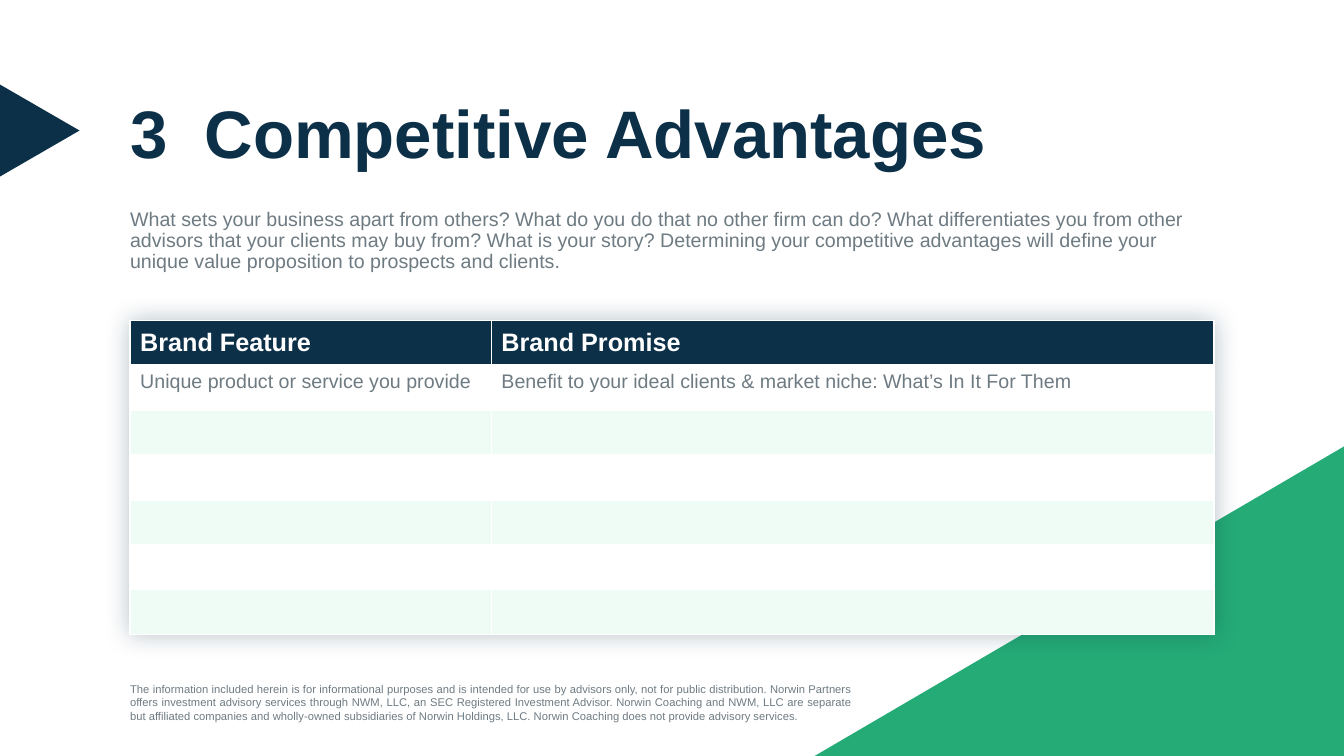
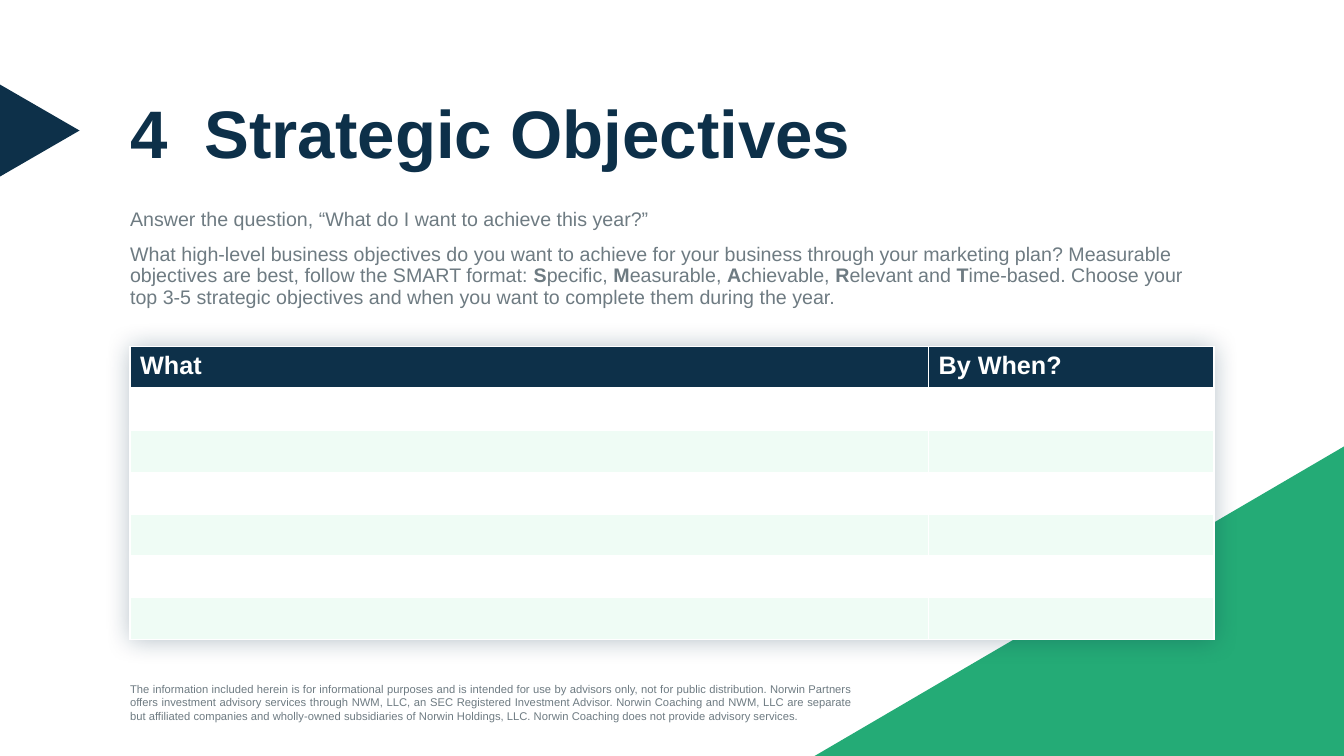
import pptx
import pptx.dml.color
import pptx.enum.shapes
import pptx.enum.text
import pptx.oxml
import pptx.oxml.ns
import pptx.util

SHAPE = pptx.enum.shapes.MSO_SHAPE
ANCHOR = pptx.enum.text.MSO_ANCHOR
ALIGN = pptx.enum.text.PP_ALIGN

DISCLAIMER = (
    "The information included herein is for informational purposes and is intended for use by "
    "advisors only, not for public distribution. Norwin Partners offers investment advisory "
    "services through NWM, LLC, an SEC Registered Investment Advisor. Norwin Coaching and NWM, "
    "LLC are separate but affiliated companies and wholly-owned subsidiaries of Norwin Holdings, "
    "LLC. Norwin Coaching does not provide advisory services."
)


def rgb(value):
    return pptx.dml.color.RGBColor.from_string(value)


def element(tag, content="", **attributes):
    """Build one element of the drawing namespace."""
    pairs = "".join(f' {name}="{value}"' for name, value in attributes.items())
    return pptx.oxml.parse_xml(
        f"<a:{tag} {pptx.oxml.ns.nsdecls('a')}{pairs}>{content}</a:{tag}>")


class Deck:
    FONT = "Arial"
    NAVY, GREEN, GREY = "0D3049", "24AB76", "6E7B82"
    WHITE, MINT = "FFFFFF", "EFFCF5"
    COLUMNS = 12
    MARGIN, COLUMN, ROW = 1.29, 10.75 / COLUMNS, 0.5

    def __init__(self):
        self.prs = pptx.Presentation()
        self.prs.slide_width = pptx.util.Inches(13.33)
        self.prs.slide_height = pptx.util.Inches(7.5)
        self.slide = None

    def cols(self, n):
        return pptx.util.Inches(n * self.COLUMN)

    def rows(self, n):
        return pptx.util.Inches(n * self.ROW)

    def box(self, x, y, w, h):
        """Left, top, width and height; x counts columns from the margin."""
        return (pptx.util.Inches(self.MARGIN) + self.cols(x), self.rows(y),
                self.cols(w), self.rows(h))

    def add_slide(self, number, title):
        self.slide = self.prs.slides.add_slide(self.prs.slide_layouts[1])
        corner = self.shape(SHAPE.RIGHT_TRIANGLE, (7.58, 8.86, 5.86, 6.14), self.GREEN)
        corner.element.spPr.xfrm.set("flipH", "1")
        marker = self.shape(SHAPE.ISOSCELES_TRIANGLE, (-1.51, 1.8, 1.02, 1.58), self.NAVY)
        marker.rotation = 90
        self.title(number, title)

    def shape(self, kind, place, color):
        sp = self.slide.shapes.add_shape(kind, *self.box(*place))
        sp.shadow.inherit = False
        sp.fill.solid()
        sp.fill.fore_color.rgb = rgb(color)
        sp.line.fill.background()
        return sp

    def frame(self, sp):
        """Prepare a text frame without insets that grows with its text."""
        tf = sp.text_frame
        tf.margin_left = tf.margin_top = tf.margin_right = tf.margin_bottom = 0
        tf.word_wrap = True
        tf.auto_size = pptx.enum.text.MSO_AUTO_SIZE.SHAPE_TO_FIT_TEXT
        tf.vertical_anchor = ANCHOR.TOP
        return tf

    def place(self, sp, *place):
        sp.left, sp.top, sp.width, sp.height = self.box(*place)
        return self.frame(sp)

    def add_runs(self, p, text, size, color, bold=False):
        """Add runs to a paragraph; text between asterisks is bold."""
        for i, part in enumerate(text.split("*")):
            r = p.add_run()
            r.text = part
            r.font.name = self.FONT
            r.font.size = pptx.util.Pt(size)
            r.font.bold = bold or i % 2 == 1
            r.font.color.rgb = rgb(color)

    def title(self, number, text):
        p = self.place(self.slide.shapes.title, 0, 2, self.COLUMNS, 1.5).paragraphs[0]
        stop = pptx.util.Inches(0.74)
        p._p.get_or_add_pPr().append(
            element("tabLst", f'<a:tab pos="{stop}" algn="l"/>'))
        p.alignment = ALIGN.LEFT
        p.line_spacing = 0.9
        p.space_before = pptx.util.Pt(0)
        self.add_runs(p, f"{number}\t{text}", 48, self.NAVY, bold=True)

    def body(self, paragraphs, height):
        tf = self.place(self.slide.placeholders[1], 0, 4.16, self.COLUMNS, height)
        for i, text in enumerate(paragraphs):
            p = tf.add_paragraph() if i else tf.paragraphs[0]
            pPr = p._p.get_or_add_pPr()
            pPr.set("marL", "0")
            pPr.set("indent", "0")
            pPr.append(element("buNone"))
            p.line_spacing = 0.9
            p.space_before = pptx.util.Pt(10 if i else 0)
            self.add_runs(p, text, 14, self.GREY)

    def footer(self):
        sp = self.slide.shapes.add_textbox(*self.box(0, 13.54, 8, 0.8))
        p = self.frame(sp).paragraphs[0]
        p.alignment = ALIGN.JUSTIFY
        self.add_runs(p, DISCLAIMER, 8, self.GREY)

    def borders(self, cell, bottom):
        tcPr = cell._tc.get_or_add_tcPr()
        fill = f'<a:solidFill><a:srgbClr val="{self.WHITE}"/></a:solidFill>'
        for i, (side, width) in enumerate((("L", 1), ("R", 1), ("T", 1), ("B", bottom))):
            tcPr.insert(i, element(f"ln{side}", fill, w=pptx.util.Pt(width)))

    def table(self, top, widths, row_height, texts, count=7, header_anchor=ANCHOR.TOP):
        """Draw a header and banded rows; rows beyond texts stay empty."""
        table = self.slide.shapes.add_table(
            count, len(widths), *self.box(0, top, sum(widths), count * row_height)).table
        table.horz_banding = False
        blur = pptx.util.Inches(0.25)
        table._tbl.tblPr.insert(0, element(
            "effectLst",
            f'<a:outerShdw blurRad="{blur}" dist="0" algn="ctr">'
            f'<a:srgbClr val="{self.NAVY}"><a:alpha val="30000"/></a:srgbClr></a:outerShdw>'))
        for column, width in zip(table.columns, widths):
            column.width = self.cols(width)
        for i, row in enumerate(table.rows):
            row.height = self.rows(row_height)
            header = i == 0
            fill = self.NAVY if header else (self.MINT, self.WHITE)[i % 2]
            style = (18, self.WHITE, True) if header else (14, self.GREY)
            for j, cell in enumerate(row.cells):
                cell.fill.solid()
                cell.fill.fore_color.rgb = rgb(fill)
                cell.vertical_anchor = header_anchor if header else ANCHOR.TOP
                self.borders(cell, 3 if header else 1)
                if i < len(texts):
                    self.add_runs(cell.text_frame.paragraphs[0], texts[i][j], *style)


def main():
    deck = Deck()

    deck.add_slide(3, "Competitive Advantages")
    deck.body([
        "What sets your business apart from others? What do you do that no other firm can do? "
        "What differentiates you from other advisors that your clients may buy from? What is "
        "your story? Determining your competitive advantages will define your unique value "
        "proposition to prospects and clients.",
    ], 1.28)
    deck.table(6.36, (4, 8), 0.89, [
        ("Brand Feature", "Brand Promise"),
        ("Unique product or service you provide",
         "Benefit to your ideal clients & market niche: What’s In It For Them"),
    ], header_anchor=ANCHOR.MIDDLE)
    deck.footer()

    deck.add_slide(4, "Strategic Objectives")
    deck.body([
        "Answer the question, “What do I want to achieve this year?”",
        "What high-level business objectives do you want to achieve for your business through "
        "your marketing plan? Measurable objectives are best, follow the SMART format: "
        "*S*pecific, *M*easurable, *A*chievable, *R*elevant and *T*ime-based. Choose your top "
        "3-5 strategic objectives and when you want to complete them during the year.",
    ], 1.98)
    deck.table(6.88, (8.84, 3.16), 0.83, [("What", "By When?")])
    deck.footer()

    deck.prs.save("out.pptx")


if __name__ == "__main__":
    main()
